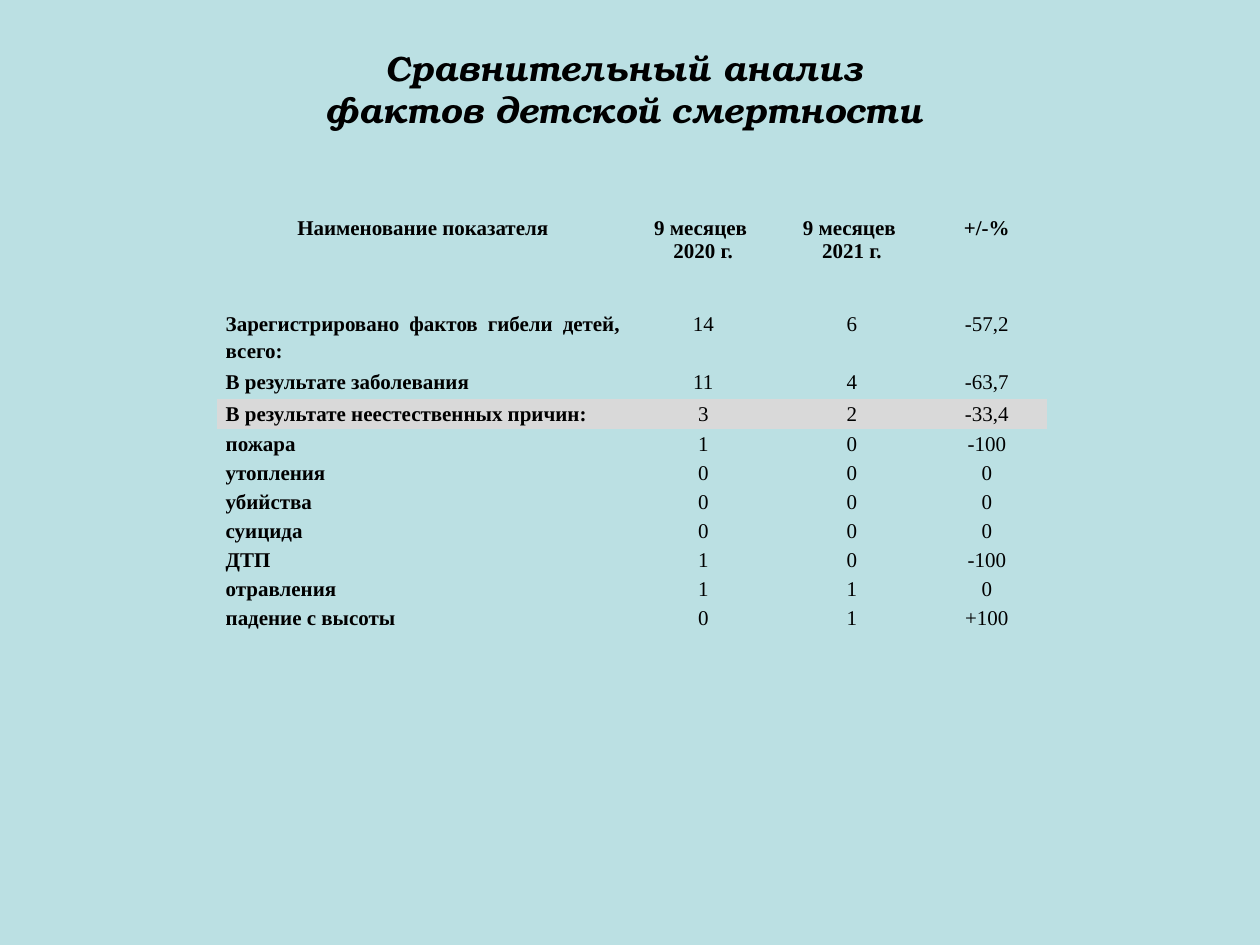
from pptx import Presentation
from pptx.dml.color import RGBColor
from pptx.enum.text import MSO_ANCHOR, PP_ALIGN as Align
from pptx.util import Pt

COLORS = {"background": "BBE0E3", "text": "000000", "highlight": "D9D9D9"}
TITLE = "Сравнительный анализ \vфактов детской смертности "
HEADERS = ["Наименование показателя", "9 месяцев \n2020 г.", "9 месяцев \n2021 г.", "+/-%"]
ROWS = [
    ("Зарегистрировано фактов гибели детей, всего:", "14", "6", "-57,2"),
    ("В результате заболевания", "11", "4", "-63,7"),
    ("В результате неестественных причин:", "3", "2", "-33,4"),
    ("пожара", "1", "0", "-100"),
    ("утопления", "0", "0", "0"),
    ("убийства", "0", "0", "0"),
    ("суицида", "0", "0", "0"),
    ("ДТП", "1", "0", "-100"),
    ("отравления", "1", "1", "0"),
    ("падение с высоты", "0", "1", "+100"),
]
COLUMN_WIDTHS = [235.4, 85, 85, 69.1]
ROW_HEIGHTS = [27, 54, 18, 17.3, 15.4] + [16.5] * 6
TOTAL_ROW, HIGHLIGHT_ROW = 1, 3
TOTAL_ROW_GAP = 24
NO_STYLE = "{2D5ABB26-0587-4C30-8999-92F81FD0307C}"


def color(name):
    return RGBColor.from_string(COLORS[name])


def style_paragraph(paragraph, font_name, size, alignment, bold=False, italic=False):
    paragraph.alignment = alignment
    font = paragraph.font
    font.name, font.size = font_name, Pt(size)
    font.bold, font.italic = bold, italic
    font.color.rgb = color("text")


def add_title(slide, left, top, width, height):
    shape = slide.shapes.add_textbox(Pt(left), Pt(top), Pt(width), Pt(height))
    frame = shape.text_frame
    frame.word_wrap = True
    frame.vertical_anchor = MSO_ANCHOR.MIDDLE
    paragraph = frame.paragraphs[0]
    paragraph.text = TITLE
    style_paragraph(paragraph, "TeX Gyre Bonum", 20, Align.CENTER, bold=True, italic=True)


def fill_cell(cell, text, row, column):
    cell.text = text
    cell.margin_left = cell.margin_right = Pt(5)
    cell.margin_top = Pt(TOTAL_ROW_GAP if row == TOTAL_ROW else 0)
    cell.margin_bottom = Pt(0)
    if row == HIGHLIGHT_ROW:
        cell.fill.solid()
        cell.fill.fore_color.rgb = color("highlight")
    else:
        cell.fill.background()

    is_header, is_label = row == 0, column == 0
    alignment = Align.JUSTIFY if is_label and not is_header else Align.CENTER
    for paragraph in cell.text_frame.paragraphs:
        style_paragraph(paragraph, "Times New Roman", 12, alignment, bold=is_header or is_label)
        if not is_header:
            paragraph.line_spacing = 1.15
            paragraph.space_after = Pt(10)


def add_comparison_table(slide, left, top):
    frame = slide.shapes.add_table(
        len(ROW_HEIGHTS), len(COLUMN_WIDTHS), Pt(left), Pt(top),
        Pt(sum(COLUMN_WIDTHS)), Pt(sum(ROW_HEIGHTS)))
    table = frame.table
    table.first_row = table.horz_banding = False
    table._tbl.tblPr[0].text = NO_STYLE
    for column, width in zip(table.columns, COLUMN_WIDTHS):
        column.width = Pt(width)
    for row, height in zip(table.rows, ROW_HEIGHTS):
        row.height = Pt(height)
    for row, texts in enumerate([HEADERS, *ROWS]):
        for column, text in enumerate(texts):
            fill_cell(table.cell(row, column), text, row, column)


def main():
    presentation = Presentation()
    presentation.slide_width, presentation.slide_height = Pt(720), Pt(540)
    slide = presentation.slides.add_slide(presentation.slide_layouts[6])
    slide.background.fill.solid()
    slide.background.fill.fore_color.rgb = color("background")

    # Heading
    add_title(slide, 36, 19.5, 648, 62.5)
    # Indicators by period
    add_comparison_table(slide, 124, 124)

    presentation.save("out.pptx")


if __name__ == "__main__":
    main()
